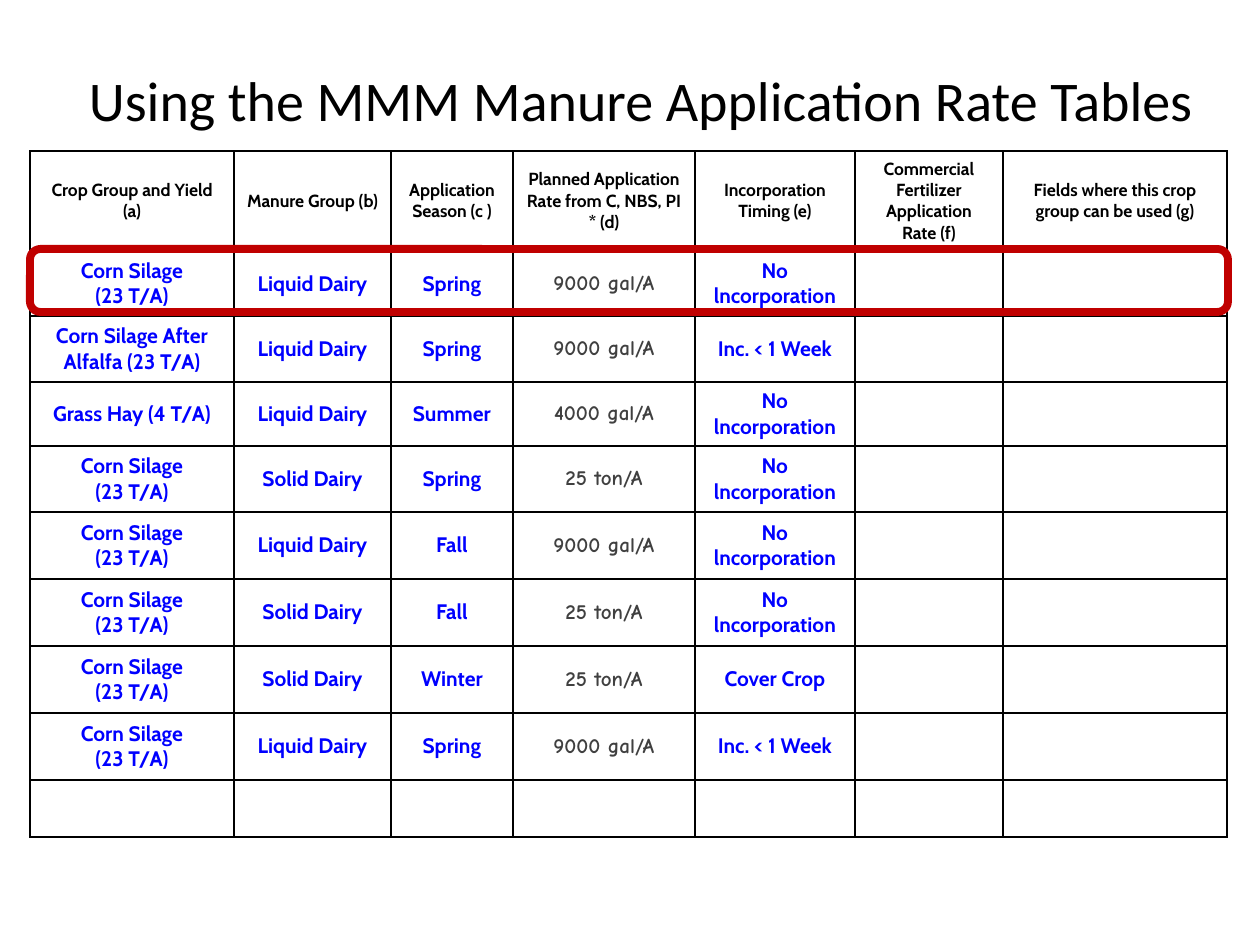
"""Build the manure application rate table slide."""
import dataclasses

import lxml.etree
import pptx
import pptx.dml.color
import pptx.enum.shapes
import pptx.enum.text
import pptx.oxml.ns
import pptx.util


@dataclasses.dataclass(frozen=True)
class TextStyle:
    """Hold the look of one kind of text."""
    font: str
    size: int
    color: str
    bold: bool


@dataclasses.dataclass(frozen=True)
class Theme:
    """Hold the colours and type styles of the slide."""
    paper: str = "FFFFFF"
    rule: str = "000000"
    highlight: str = "C00000"
    rule_width: float = 1
    highlight_width: float = 4.5
    title: TextStyle = TextStyle("Calibri", 32, "000000", False)
    header: TextStyle = TextStyle("Cabin", 10, "000000", True)
    entry: TextStyle = TextStyle("Cabin", 12, "0000FF", True)
    rate: TextStyle = TextStyle("Comic Neue", 12, "404040", True)


THEME = Theme()
PX_PER_INCH = 126
RATE_COLUMN = 3
COLUMN_WIDTHS = [204, 157, 122, 182, 160, 148, 224]
ROW_HEIGHTS = [100, 65, 66, 64, 66, 67, 67, 67, 67, 57]
HEADERS = [
    "Crop Group and Yield (a)",
    "Manure Group (b)",
    "Application Season (c )",
    "Planned Application Rate from C, NBS, PI * (d)",
    "Incorporation Timing (e)",
    "Commercial Fertilizer Application Rate (f)",
    "Fields where this crop group can be used (g)",
]
SILAGE = "Corn Silage\n(23 T/A)"
LIQUID, SOLID = "Liquid Dairy", "Solid Dairy"
LIQUID_RATE, SOLID_RATE = "9000 gal/A", "25 ton/A"
UNTILLED, WITHIN_WEEK = "No lncorporation", "Inc. < 1 Week"
ENTRIES = [
    [SILAGE, LIQUID, "Spring", LIQUID_RATE, UNTILLED],
    ["Corn Silage After Alfalfa (23 T/A)", LIQUID, "Spring", LIQUID_RATE, WITHIN_WEEK],
    ["Grass Hay (4 T/A)", LIQUID, "Summer", "4000 gal/A", UNTILLED],
    [SILAGE, SOLID, "Spring", SOLID_RATE, UNTILLED],
    [SILAGE, LIQUID, "Fall", LIQUID_RATE, UNTILLED],
    [SILAGE, SOLID, "Fall", SOLID_RATE, UNTILLED],
    [SILAGE, SOLID, "Winter", SOLID_RATE, "Cover Crop"],
    [SILAGE, LIQUID, "Spring", LIQUID_RATE, WITHIN_WEEK],
]


def px(length):
    """Turn pixels into EMU."""
    return pptx.util.Emu(round(length * 914400 / PX_PER_INCH))


def rgb(color):
    """Turn a hex string into a colour."""
    return pptx.dml.color.RGBColor.from_string(color)


def write_text(frame, text, style, align):
    """Write each line of the text as one styled paragraph."""
    for index, line in enumerate(text.split("\n")):
        para = frame.add_paragraph() if index else frame.paragraphs[0]
        para.alignment = align
        span = para.add_run()
        span.text = line
        span.font.name = style.font
        span.font.size = pptx.util.Pt(style.size)
        span.font.bold = style.bold
        span.font.color.rgb = rgb(style.color)


def add_title(page, text, left, top, width, height):
    """Add the slide title."""
    box = page.shapes.add_textbox(px(left), px(top), px(width), px(height))
    frame = box.text_frame
    frame.word_wrap = True
    frame.margin_left = frame.margin_right = 0
    frame.vertical_anchor = pptx.enum.text.MSO_ANCHOR.MIDDLE
    write_text(frame, text, THEME.title, pptx.enum.text.PP_ALIGN.LEFT)


def style_cell(cell):
    """Give a cell its fill, anchor and four borders."""
    cell.vertical_anchor = pptx.enum.text.MSO_ANCHOR.MIDDLE
    cell.fill.solid()
    cell.fill.fore_color.rgb = rgb(THEME.paper)
    properties = cell._tc.get_or_add_tcPr()
    qn = pptx.oxml.ns.qn
    for index, side in enumerate(("a:lnL", "a:lnR", "a:lnT", "a:lnB")):
        border = lxml.etree.Element(qn(side), w=str(pptx.util.Pt(THEME.rule_width)))
        fill = lxml.etree.SubElement(border, qn("a:solidFill"))
        lxml.etree.SubElement(fill, qn("a:srgbClr"), val=THEME.rule)
        properties.insert(index, border)


def cell_style(row, column):
    """Choose the text style by place in the table."""
    if row == 0:
        return THEME.header
    return THEME.rate if column == RATE_COLUMN else THEME.entry


def add_rate_table(page, left, top):
    """Add the application rate table."""
    holder = page.shapes.add_table(
        len(ROW_HEIGHTS), len(COLUMN_WIDTHS), px(left), px(top),
        px(sum(COLUMN_WIDTHS)), px(sum(ROW_HEIGHTS)))
    table = holder.table
    for column, width in zip(table.columns, COLUMN_WIDTHS):
        column.width = px(width)
    for row, height in zip(table.rows, ROW_HEIGHTS):
        row.height = px(height)
    for cell in table.iter_cells():
        style_cell(cell)
    for r, texts in enumerate([HEADERS, *ENTRIES]):
        for c, text in enumerate(texts):
            write_text(table.cell(r, c).text_frame, text, cell_style(r, c),
                       pptx.enum.text.PP_ALIGN.CENTER)


def add_highlight(page, left, top, width, height):
    """Add the rounded outline around the first entry."""
    outline = page.shapes.add_shape(
        pptx.enum.shapes.MSO_SHAPE.ROUNDED_RECTANGLE,
        px(left), px(top), px(width), px(height))
    outline.shadow.inherit = False
    outline.fill.background()
    outline.line.color.rgb = rgb(THEME.highlight)
    outline.line.width = pptx.util.Pt(THEME.highlight_width)


def main():
    """Build and save the deck."""
    deck = pptx.Presentation()
    deck.slide_width, deck.slide_height = px(1260), px(945)
    page = deck.slides.add_slide(deck.slide_layouts[6])
    add_rate_table(page, 30, 151)
    add_title(page, "Using the MMM Manure Application Rate Tables", 89, 49, 1123, 101)
    add_highlight(page, 30, 249, 1198, 63)
    deck.save("out.pptx")


if __name__ == "__main__":
    main()
